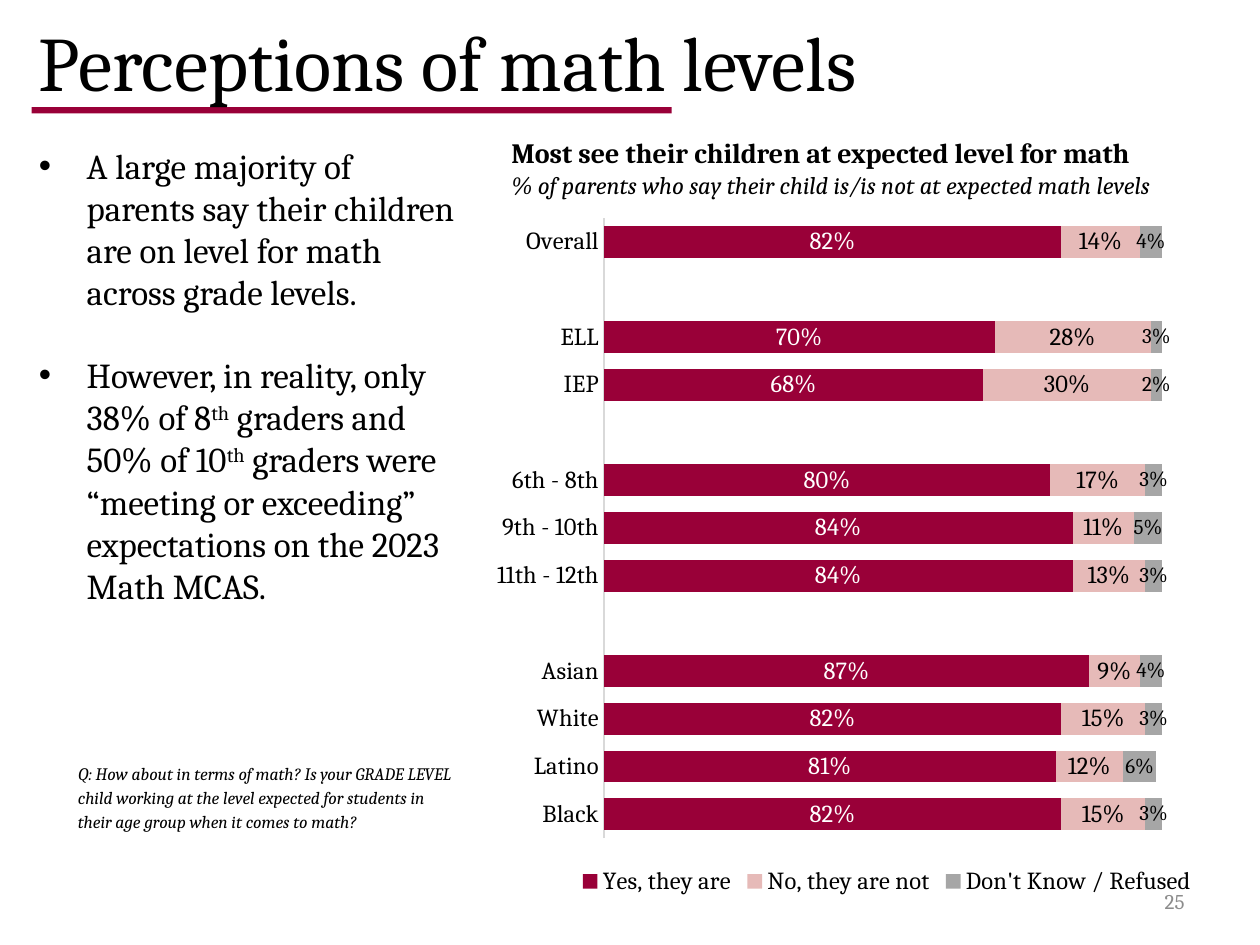
from lxml.etree import SubElement
from pptx import Presentation
from pptx.chart.data import CategoryChartData
from pptx.dml.color import RGBColor
from pptx.enum.chart import XL_CHART_TYPE, XL_LABEL_POSITION, XL_LEGEND_POSITION, XL_TICK_MARK
from pptx.enum.shapes import MSO_SHAPE
from pptx.enum.text import MSO_ANCHOR, PP_ALIGN
from pptx.oxml.ns import qn
from pptx.util import Inches, Pt

CELL = Inches(0.1)
COLUMNS, ROWS = 100, 75
FACE = "Cambria"
PERCENT = "###0%"

MAROON = RGBColor(0x99, 0x00, 0x38)
ROSE = RGBColor(0xE6, 0xBA, 0xB8)
SILVER = RGBColor(0xA6, 0xA6, 0xA6)
HAIRLINE = RGBColor(0xD9, 0xD9, 0xD9)
FOLIO_GRAY = RGBColor(0x8C, 0x8C, 0x8C)
BLACK = RGBColor(0, 0, 0)
WHITE = RGBColor(0xFF, 0xFF, 0xFF)

GROUPS = ["Black", "Latino", "White", "Asian", "", "11th - 12th", "9th - 10th",
          "6th - 8th", "", "IEP", "ELL", "", "Overall"]
ANSWERS = [
    ("Yes, they are", MAROON, WHITE, 14,
     [0.82, 0.81, 0.82, 0.87, None, 0.84, 0.84, 0.8, None, 0.68, 0.7, None, 0.82]),
    ("No, they are not", ROSE, BLACK, 14,
     [0.15, 0.12, 0.15, 0.09, None, 0.13, 0.11, 0.17, None, 0.3, 0.28, None, 0.14]),
    ("Don't Know / Refused", SILVER, BLACK, 12,
     [0.03, 0.06, 0.03, 0.04, None, 0.03, 0.05, 0.03, None, 0.02, 0.03, None, 0.04]),
]
FINDINGS = [
    [("A large majority of parents say their children are on level for math "
      "across grade levels.", False)],
    [("However, in reality, only 38% of 8", False), ("th", True),
     (" graders and 50% of 10", False), ("th", True),
     (" graders were “meeting or exceeding” expectations on the 2023 Math MCAS.", False)],
]


def grid(*cells):
    """Turn grid columns and rows into lengths."""
    return [round(cell * CELL) for cell in cells]


def style_font(font, size, color=BLACK, bold=False, italic=False):
    """Set the face, size, colour and emphasis of a font."""
    font.name, font.size = FACE, Pt(size)
    font.bold, font.italic = bold, italic
    font.color.rgb = color


def add_run(paragraph, text, size, superscript=False, **look):
    """Append one styled run to a paragraph."""
    run = paragraph.add_run()
    run.text = text
    style_font(run.font, size, **look)
    if superscript:
        run._r.get_or_add_rPr().set("baseline", "30000")


def add_frame(slide, place, anchor=MSO_ANCHOR.TOP):
    """Add a wrapping text box and return its text frame."""
    frame = slide.shapes.add_textbox(*grid(*place)).text_frame
    frame.word_wrap = True
    frame.vertical_anchor = anchor
    return frame


def next_paragraph(frame, index):
    """Return the first paragraph of a frame, or a new one after it."""
    return frame.add_paragraph() if index else frame.paragraphs[0]


def add_bullet(paragraph):
    """Give a paragraph a round bullet with a hanging indent."""
    properties = paragraph._p.get_or_add_pPr()
    indent = Inches(0.38)
    properties.set("marL", str(indent))
    properties.set("indent", str(-indent))
    SubElement(properties, qn("a:buFont")).set("typeface", "Arial")
    SubElement(properties, qn("a:buChar")).set("char", "•")


def add_title(slide):
    """Add the heading over its maroon rule."""
    rule = slide.shapes.add_shape(MSO_SHAPE.RECTANGLE, *grid(2.5, 8.5, 50.8, 0.5))
    rule.shadow.inherit = False
    rule.fill.solid()
    rule.fill.fore_color.rgb = MAROON
    rule.line.fill.background()
    heading = add_frame(slide, (2.1, 0, 90, 9.7), MSO_ANCHOR.MIDDLE)
    add_run(heading.paragraphs[0], "Perceptions of math levels", 44)


def add_findings(slide):
    """Add the bulleted findings."""
    frame = add_frame(slide, (2.1, 11, 35, 53.6))
    for index, pieces in enumerate(FINDINGS):
        finding = next_paragraph(frame, index)
        if index:
            finding.space_before = Pt(23.5)
        add_bullet(finding)
        for text, superscript in pieces:
            add_run(finding, text, 20, superscript)


def add_chart_heading(slide):
    """Add the chart's heading and subheading."""
    frame = add_frame(slide, (39.6, 10.3, 64.2, 6.1))
    add_run(next_paragraph(frame, 0),
            "Most see their children at expected level for math", 16, bold=True)
    add_run(next_paragraph(frame, 1),
            "% of parents who say their child is/is not at expected math levels",
            14, italic=True)


def fix_plot_area(chart, **shares):
    """Pin the inner plot area to shares of the chart's size."""
    plot_area = chart._chartSpace.chart.plotArea
    layout = plot_area.find(qn("c:layout"))
    if layout is None:
        layout = SubElement(plot_area, qn("c:layout"))
        plot_area.insert(0, layout)
    manual = SubElement(layout, qn("c:manualLayout"))
    settings = {"layoutTarget": "inner", "xMode": "edge", "yMode": "edge", **shares}
    for tag, value in settings.items():
        SubElement(manual, qn(f"c:{tag}")).set("val", str(value))


def style_axes(chart):
    """Show only group names and a hairline, on a scale up to 100%."""
    groups, share = chart.category_axis, chart.value_axis
    groups.major_tick_mark = groups.minor_tick_mark = XL_TICK_MARK.NONE
    groups.format.line.color.rgb = HAIRLINE
    groups.format.line.width = Pt(0.75)
    style_font(groups.tick_labels.font, 14)
    share.minimum_scale, share.maximum_scale = 0, 1
    share.has_major_gridlines = False
    share.visible = False


def style_answer(series, fill, ink, size):
    """Colour one answer's bars and label them with percentages."""
    series.format.fill.solid()
    series.format.fill.fore_color.rgb = fill
    labels = series.data_labels
    labels.show_value = True
    labels.number_format, labels.number_format_is_linked = PERCENT, False
    labels.position = XL_LABEL_POSITION.CENTER
    style_font(labels.font, size, ink)


def add_answers_chart(slide):
    """Add the stacked bars of answers by group."""
    data = CategoryChartData(number_format=PERCENT)
    data.categories = GROUPS
    for name, *_, values in ANSWERS:
        data.add_series(name, values)
    chart = slide.shapes.add_chart(
        XL_CHART_TYPE.BAR_STACKED, *grid(38.3, 16.2, 64.2, 55.3), data).chart
    chart.has_title = False
    chart.font.name, chart.font.size = "Calibri", Pt(10)
    chart.font.color.rgb = BLACK
    bars = chart.plots[0]
    bars.gap_width, bars.overlap, bars.vary_by_categories = 50, 100, False
    for series, (_, fill, ink, size, _) in zip(bars.series, ANSWERS):
        style_answer(series, fill, ink, size)
    style_axes(chart)
    chart.has_legend = True
    chart.legend.position = XL_LEGEND_POSITION.BOTTOM
    chart.legend.include_in_layout = False
    style_font(chart.legend.font, 14)
    fix_plot_area(chart, x=0.15, y=0.02, w=0.69, h=0.89)


def add_question(slide):
    """Add the survey question's wording."""
    question = add_frame(slide, (5.2, 59.8, 31.8, 8.5)).paragraphs[0]
    question.line_spacing = 1.15
    add_run(question, "Q: How about in terms of math? Is your GRADE LEVEL child working "
            "at the level expected for students in their age group when it comes to math?",
            10, italic=True)


def add_folio(slide):
    """Add the page number."""
    folio = add_frame(slide, (71.7, 69.5, 23.3, 4), MSO_ANCHOR.MIDDLE).paragraphs[0]
    folio.alignment = PP_ALIGN.RIGHT
    add_run(folio, "25", 12, color=FOLIO_GRAY)


def main():
    """Build and save the slide."""
    deck = Presentation()
    deck.slide_width, deck.slide_height = grid(COLUMNS, ROWS)
    slide = deck.slides.add_slide(deck.slide_layouts[6])
    for add_part in (add_title, add_findings, add_folio, add_answers_chart,
                     add_chart_heading, add_question):
        add_part(slide)
    deck.save("out.pptx")


if __name__ == "__main__":
    main()
